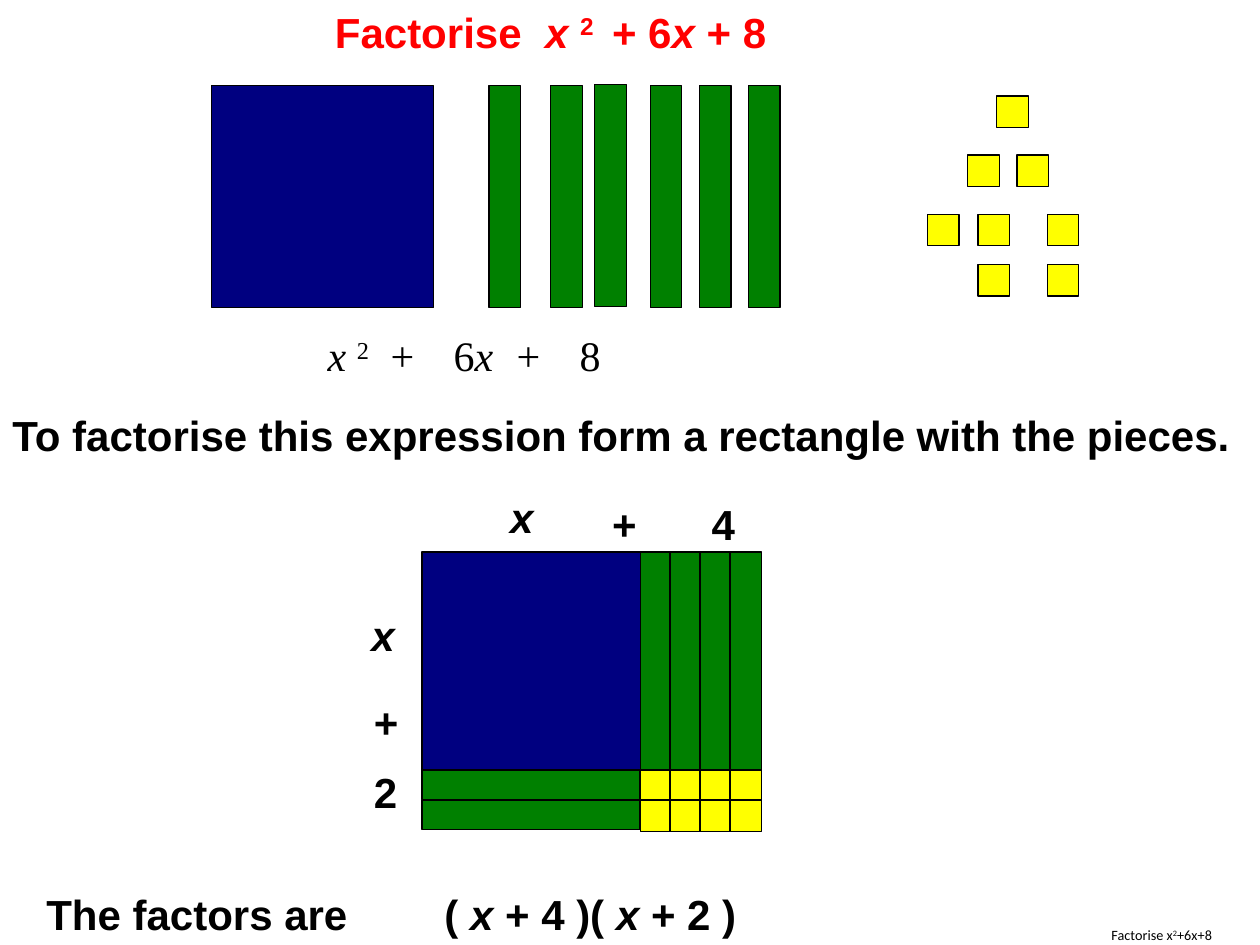
from lxml import etree
from pptx import Presentation
from pptx.dml.color import RGBColor
from pptx.enum.shapes import MSO_SHAPE
from pptx.enum.text import MSO_ANCHOR, MSO_AUTO_SIZE, PP_ALIGN
from pptx.oxml.ns import qn
from pptx.util import Pt

RECTANGLE = MSO_SHAPE.RECTANGLE
MIDDLE = MSO_ANCHOR.MIDDLE
CENTER = PP_ALIGN.CENTER
NO_AUTOFIT = MSO_AUTO_SIZE.NONE

NAVY = RGBColor(0x00, 0x00, 0x80)
GREEN = RGBColor(0x00, 0x80, 0x00)
YELLOW = RGBColor(0xFF, 0xFF, 0x00)
BLACK = RGBColor(0x00, 0x00, 0x00)
RED = RGBColor(0xFF, 0x00, 0x00)

SIDE = 126.8   # length of x
UNIT = 18      # length of 1
PITCH = 17.1   # step between pieces that touch
LABEL_HEIGHT = 36


def add_piece(page, left, top, width, height, color):
    piece = page.shapes.add_shape(RECTANGLE, Pt(left), Pt(top), Pt(width), Pt(height))
    piece.shadow.inherit = False
    piece.fill.solid()
    piece.fill.fore_color.rgb = color
    piece.line.color.rgb = BLACK
    piece.line.width = Pt(0.75)


def add_spans(para, spans, font="Arial", size=24, color=BLACK, bold=True):
    """Each span is a text with a style: "" plain, "i" italic, "s" superscript."""
    for text, style in spans:
        span = para.add_run()
        span.text = text
        span.font.name = font
        span.font.size = Pt(size)
        span.font.bold = bold
        span.font.italic = style == "i"
        span.font.color.rgb = color
        if style == "s":
            span.font._element.set("baseline", "30000")


def add_label(page, left, top, width, spans, wrap=False, **look):
    box = page.shapes.add_textbox(Pt(left), Pt(top), Pt(width), Pt(LABEL_HEIGHT))
    box.text_frame.word_wrap = wrap
    para = box.text_frame.paragraphs[0]
    add_spans(para, spans, **look)
    return para


def set_tabs(para, indent, stops):
    properties = para._p.get_or_add_pPr()
    properties.set("marL", str(Pt(indent)))
    properties.set("indent", "0")
    tabs = etree.SubElement(properties, qn("a:tabLst"))
    for stop in stops:
        etree.SubElement(tabs, qn("a:tab"), pos=str(Pt(stop)), algn="l")


def add_loose_pieces(page, left, top):
    add_piece(page, left, top, SIDE, SIDE, NAVY)
    for offset, rise in [(158.4, 0), (193.7, 0), (218.9, 0.7),
                         (250.6, 0), (278.7, 0), (306.7, 0)]:
        add_piece(page, left + offset, top - rise, UNIT, SIDE, GREEN)
    # Unit tiles, row by row
    tile_rows = [(5.8, [448.6]),
                 (39.6, [432, 460.1]),
                 (73.4, [409, 437.8, 477.4]),
                 (102.2, [437.8, 477.4])]
    for drop, offsets in tile_rows:
        for offset in offsets:
            add_piece(page, left + offset, top + drop, UNIT, UNIT, YELLOW)


def add_expression(page, left, top, width):
    para = add_label(page, left, top, width,
                     [("x ", "i"), ("2", "s"), ("\t+\t6", ""), ("x", "i"), ("\t+\t8", "")],
                     wrap=True, font="Times New Roman", bold=False)
    set_tabs(para, 35.5, [115.5, 176.6, 271.5, 315])


def add_factor_rectangle(page, left, top, columns, rows):
    edge = SIDE - 2.2  # the strips overlap the square slightly
    add_piece(page, left, top, SIDE, SIDE, NAVY)
    for column in range(columns):
        add_piece(page, left + edge + column * PITCH, top, UNIT, SIDE, GREEN)
    for row in range(rows):
        strip_top = top + edge + row * PITCH
        add_piece(page, left, strip_top, edge, PITCH, GREEN)
        for column in range(columns):
            add_piece(page, left + edge + column * PITCH, strip_top, UNIT, UNIT, YELLOW)

    # Side lengths above and to the left
    add_label(page, left + 43.2, top - 38.2, 28, [("x", "i")])
    add_label(page, left + 101.5, top - 33.9, 29, [("+", "")])
    add_label(page, left + 158.4, top - 33.9, 51, [(str(columns), "")], wrap=True)
    add_label(page, left - 36, top + 29.5, 28, [("x", "i")])
    add_label(page, left - 34.6, top + 79.2, 29, [("+", "")])
    add_label(page, left - 34.6, top + 118.8, 28, [(str(rows), "")])


def add_answer(page, left, top):
    add_label(page, left, top, 186.5, [("The factors are", "")])
    add_label(page, left + 227.5, top, 181.5,
              [("( ", ""), ("x", "i"), (" + 4 )( ", ""), ("x", "i"), (" + 2 )", "")],
              wrap=True)


def set_title(page, left, top, width, height):
    title = page.shapes.title
    title.left, title.top = Pt(left), Pt(top)
    title.width, title.height = Pt(width), Pt(height)
    title.text_frame.auto_size = NO_AUTOFIT
    title.text_frame.vertical_anchor = MIDDLE
    para = title.text_frame.paragraphs[0]
    para.alignment = CENTER
    add_spans(para, [("Factorise x", ""), ("2", "s"), ("+6x+8", "")],
              font="Calibri", size=8.1, bold=False)


def main():
    deck = Presentation()
    deck.slide_width, deck.slide_height = Pt(720), Pt(540)
    page = deck.slides.add_slide(deck.slide_layouts[5])

    # Question
    add_label(page, 184.3, 0, 262.8,
              [("Factorise  ", ""), ("x ", "i"), ("2 ", "s"), (" + 6", ""),
               ("x", "i"), (" + 8", "")], color=RED)
    add_loose_pieces(page, 121, 49)
    add_expression(page, 144.7, 185, 518.4)

    # Method
    add_label(page, 0, 230.4, 711.4,
              [("To factorise this expression form a rectangle with the pieces.", "")])
    add_factor_rectangle(page, 241.2, 315.4, columns=4, rows=2)

    # Result
    add_answer(page, 19.4, 504)
    set_title(page, 607.7, 528.5, 112.3, 11.5)
    deck.save("out.pptx")


if __name__ == "__main__":
    main()
